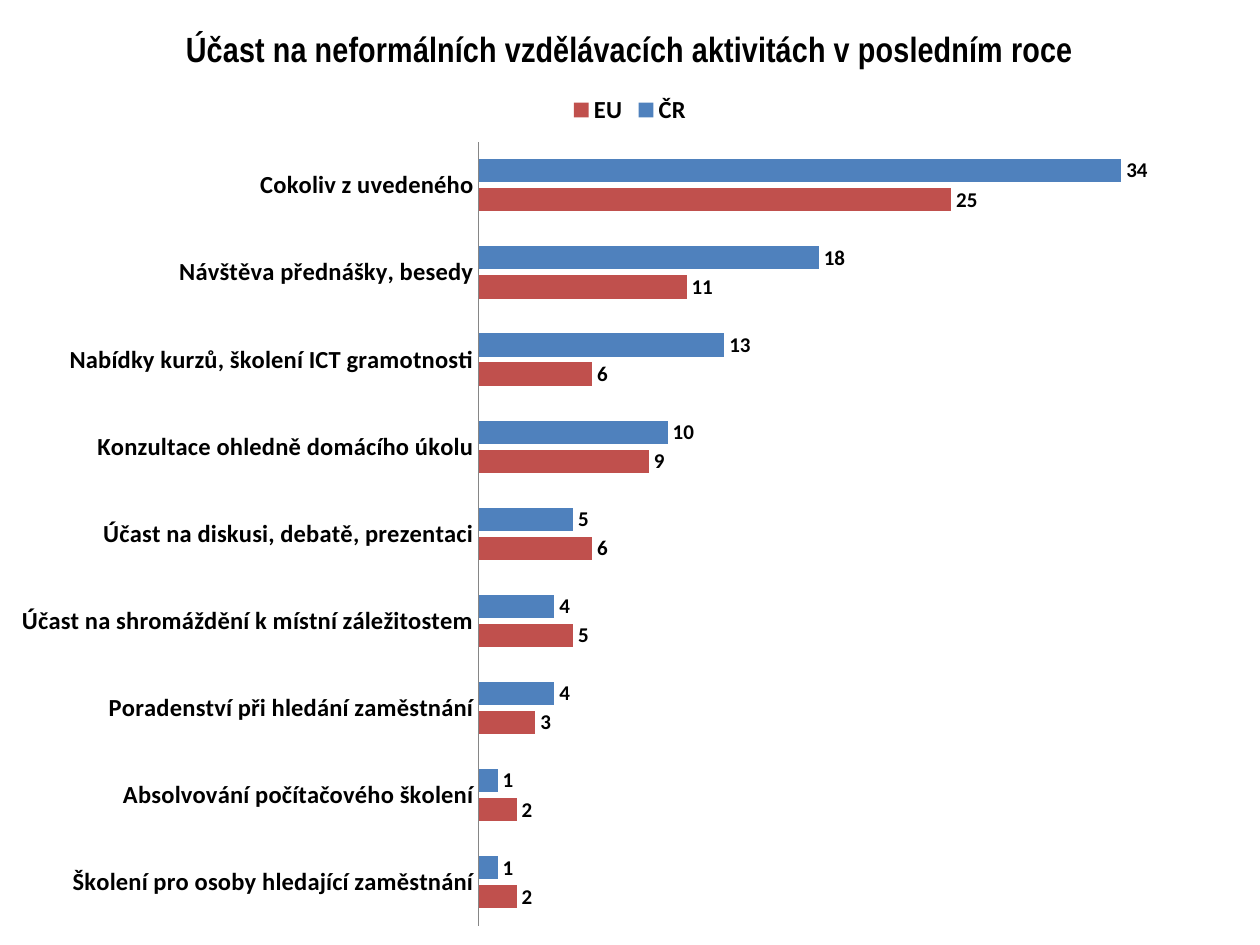
from lxml.etree import SubElement
from pptx import Presentation
from pptx.chart.data import CategoryChartData
from pptx.dml.color import RGBColor
from pptx.enum.chart import XL_CHART_TYPE, XL_LABEL_POSITION, XL_LEGEND_POSITION, XL_TICK_MARK
from pptx.oxml.ns import qn
from pptx.util import Cm, Pt

TITLE = "Účast na neformálních vzdělávacích aktivitách v posledním roce"
PARTICIPATION = [  # activity, ČR, EU
    ("Cokoliv z uvedeného", 34, 25),
    ("Návštěva přednášky, besedy", 18, 11),
    ("Nabídky kurzů, školení ICT gramotnosti", 13, 6),
    ("Konzultace ohledně domácího úkolu", 10, 9),
    ("Účast na diskusi, debatě, prezentaci", 5, 6),
    ("Účast na shromáždění k místní záležitostem", 4, 5),
    ("Poradenství při hledání zaměstnání", 4, 3),
    ("Absolvování počítačového školení", 1, 2),
    ("Školení pro osoby hledající zaměstnání", 1, 2),
]
SERIES_COLORS = {"ČR": "4F81BD", "EU": "C0504D"}


def color(hex_string):
    return RGBColor.from_string(hex_string)


class SlideBuilder:
    text_color = "000000"
    axis_color = "868686"
    body_font = "Calibri"
    title_font = "Arial Narrow"

    def __init__(self, presentation):
        self.slide = presentation.slides.add_slide(presentation.slide_layouts[6])

    def style_font(self, font, size, name=body_font, bold=True):
        font.name = name
        font.size = Pt(size)
        font.bold = bold
        font.color.rgb = color(self.text_color)

    def bar_chart(self, left, top, width, height, rows, series_colors):
        data = CategoryChartData(number_format="0")
        data.categories = [row[0] for row in rows]
        for column, name in enumerate(series_colors, start=1):
            data.add_series(name, [row[column] for row in rows])
        chart = self.slide.shapes.add_chart(
            XL_CHART_TYPE.BAR_CLUSTERED, left, top, width, height, data).chart
        self.style_font(chart.font, 10, bold=False)

        # Bars and their values
        plot = chart.plots[0]
        plot.gap_width = 150
        plot.overlap = -25
        plot.vary_by_categories = False
        for series in plot.series:
            series.format.fill.solid()
            series.format.fill.fore_color.rgb = color(series_colors[series.name])
            labels = series.data_labels
            labels.show_value = True
            labels.position = XL_LABEL_POSITION.OUTSIDE_END
            self.style_font(labels.font, 12)

        # Axes
        category_axis = chart.category_axis
        category_axis.reverse_order = True
        category_axis.major_tick_mark = XL_TICK_MARK.NONE
        category_axis.format.line.color.rgb = color(self.axis_color)
        category_axis.format.line.width = Pt(0.75)
        self.style_font(category_axis.tick_labels.font, 14)
        value_axis = chart.value_axis
        value_axis.minimum_scale = 0
        value_axis.maximum_scale = 40
        value_axis.has_major_gridlines = False
        value_axis.visible = False
        return chart

    def chart_title(self, chart, text):
        chart.has_title = True
        chart.chart_title.include_in_layout = False
        run = chart.chart_title.text_frame.paragraphs[0].add_run()
        run.text = text
        self.style_font(run.font, 20, self.title_font)

    def chart_legend(self, chart):
        chart.has_legend = True
        chart.legend.position = XL_LEGEND_POSITION.TOP
        chart.legend.include_in_layout = False
        self.style_font(chart.legend.font, 14)

    def plot_area(self, chart, **fractions):
        """Place the inner plot area by fractions of the chart size."""
        area = chart.plots[0]._element.getparent()
        for old_layout in area.findall(qn("c:layout")):
            area.remove(old_layout)
        layout = SubElement(area, qn("c:layout"))
        area.insert(0, layout)
        manual = SubElement(layout, qn("c:manualLayout"))
        settings = {"layoutTarget": "inner", "xMode": "edge", "yMode": "edge", **fractions}
        for tag, value in settings.items():
            SubElement(manual, qn(f"c:{tag}")).set("val", str(value))


def main():
    presentation = Presentation()
    presentation.slide_width = Cm(25.4)
    presentation.slide_height = Cm(19.05)
    builder = SlideBuilder(presentation)

    # Chart over the whole slide
    chart = builder.bar_chart(Cm(0), Cm(0), presentation.slide_width,
                              presentation.slide_height, PARTICIPATION, SERIES_COLORS)
    builder.chart_title(chart, TITLE)
    builder.chart_legend(chart)
    builder.plot_area(chart, x=0.38, y=0.15, w=0.6, h=0.83)

    presentation.save("out.pptx")


if __name__ == "__main__":
    main()
